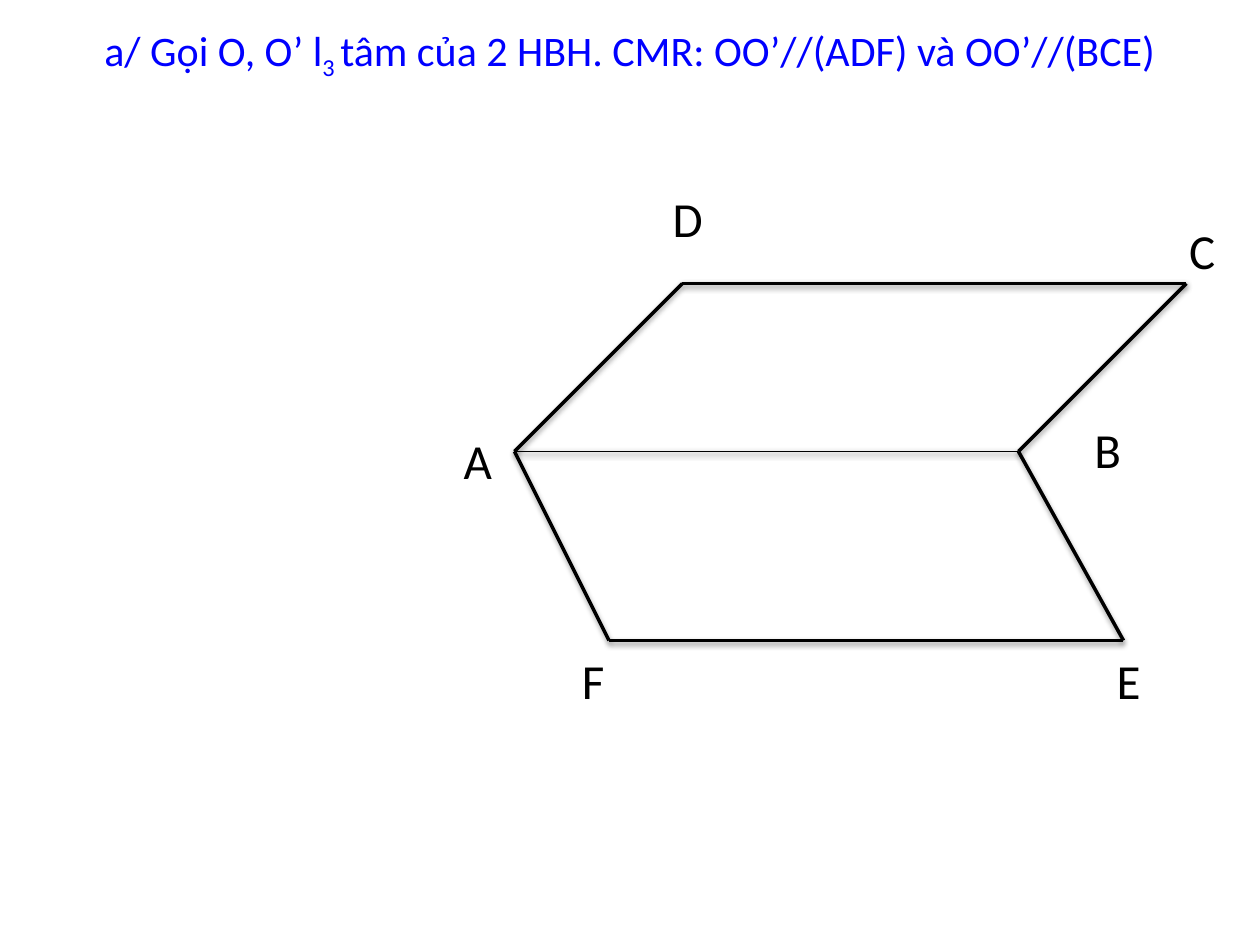
from pptx import Presentation
from pptx.dml.color import RGBColor
from pptx.enum import shapes, text
from pptx.util import Pt

FONT = "Calibri"
BLACK, BLUE = "000000", "0000FF"

# Each piece of the question with its baseline shift in thousandths of a percent
QUESTION = [
    ("a/ Gọi O, O’ l", 0),
    ("3 ", -25000),
    ("tâm của 2 HBH. CMR: OO’//(ADF) và OO’//(BCE)", 0),
]
VERTICES = {
    "A": (294, 258), "B": (582, 258), "C": (678, 162),
    "D": (390, 162), "E": (642, 366), "F": (348, 366),
}
EDGES = [("DC", 2), ("AB", 1), ("AD", 2), ("BC", 2), ("FE", 2), ("FA", 2), ("EB", 2)]
# Top left corner of each vertex label
LABELS = {
    "B": (600, 228), "A": (240, 234), "C": (654, 114),
    "D": (360, 96), "E": (612, 360), "F": (306, 360),
}
LABEL_SIZE = (66, 57.6)


def color(value):
    return RGBColor.from_string(value)


def add_text(slide, pieces, left, top, width, height, size, ink, bottom_inset=3.6):
    box = slide.shapes.add_textbox(Pt(left), Pt(top), Pt(width), Pt(height))
    frame = box.text_frame
    frame.word_wrap = True
    frame.vertical_anchor = text.MSO_ANCHOR.MIDDLE
    frame.margin_bottom = Pt(bottom_inset)
    paragraph = frame.paragraphs[0]
    paragraph.alignment = text.PP_ALIGN.CENTER
    paragraph.font.name = FONT
    paragraph.font.size = Pt(size)
    paragraph.font.color.rgb = color(ink)
    for wording, baseline in pieces:
        run = paragraph.add_run()
        run.text = wording
        if baseline:
            run.font._element.set("baseline", str(baseline))


def add_edge(slide, ends, weight):
    """Join two vertices; the theme supplies the soft shadow."""
    start, end = (VERTICES[name] for name in ends)
    edge = slide.shapes.add_connector(
        shapes.MSO_CONNECTOR.STRAIGHT, *(Pt(value) for value in start + end))
    edge.line.color.rgb = color(BLACK)
    edge.line.width = Pt(weight)


def main():
    deck = Presentation()
    deck.slide_width, deck.slide_height = Pt(720), Pt(540)
    slide = deck.slides.add_slide(deck.slide_layouts[6])
    add_text(slide, QUESTION, 36, 0, 648, 90, 24, BLUE, bottom_inset=33)
    for ends, weight in EDGES:
        add_edge(slide, ends, weight)
    for name, corner in LABELS.items():
        add_text(slide, [(name, 0)], *corner, *LABEL_SIZE, 28, BLACK)
    deck.save("out.pptx")


if __name__ == "__main__":
    main()
